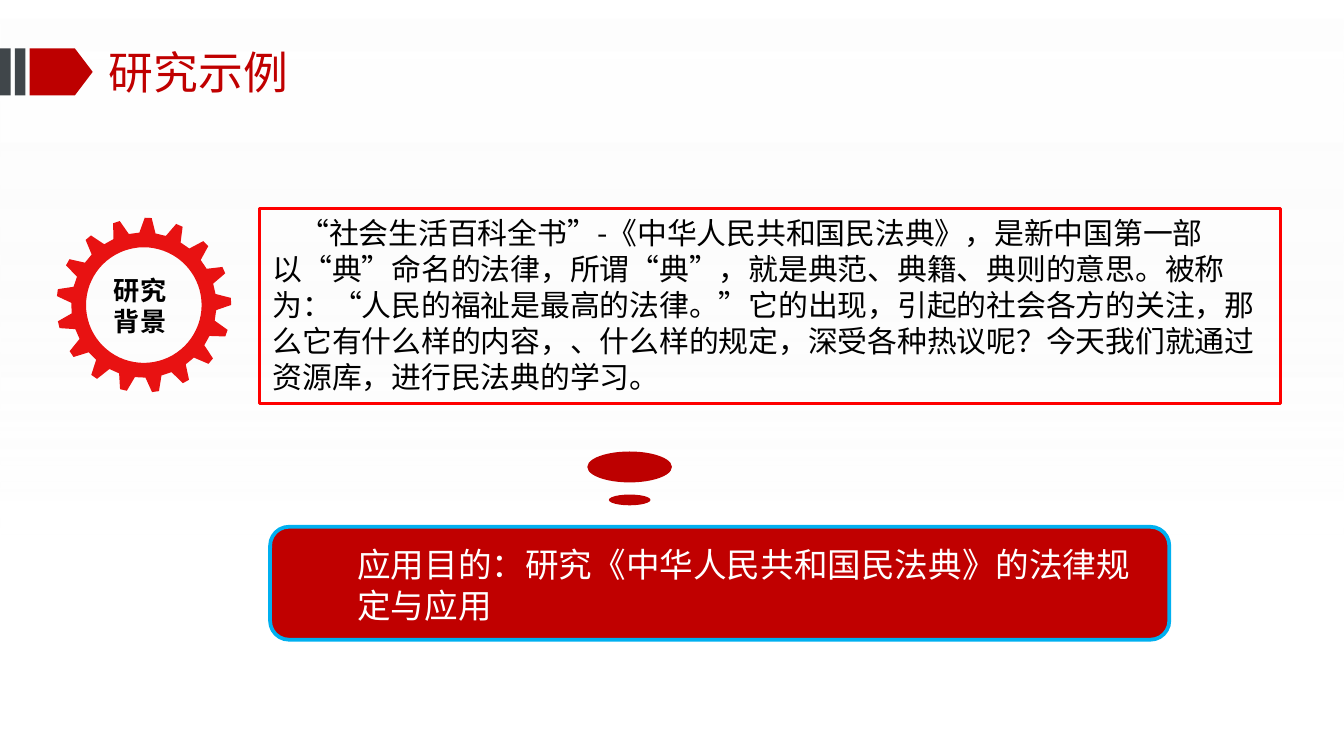
import math

import pptx
import pptx.dml.color
import pptx.enum.lang
import pptx.enum.shapes
import pptx.enum.text
import pptx.oxml.ns
import pptx.util
from lxml import etree

Inches = pptx.util.Inches
RGBColor = pptx.dml.color.RGBColor
MSO_SHAPE = pptx.enum.shapes.MSO_SHAPE
MSO_ANCHOR = pptx.enum.text.MSO_ANCHOR
qn = pptx.oxml.ns.qn

WHITE = RGBColor(0xFF, 0xFF, 0xFF)
BLACK = RGBColor(0, 0, 0)
PALE = RGBColor(0xF2, 0xF2, 0xF2)
DARK_RED = RGBColor(0xBD, 0, 0)
CRIMSON = RGBColor(0xC0, 0, 0)
GEAR_RED = RGBColor(0xE8, 0x12, 0x12)
BORDER_RED = RGBColor(0xFF, 0, 0)
SLATE = RGBColor(0x40, 0x46, 0x4A)
SKY = RGBColor(0, 0xB0, 0xF0)
CJK = "Noto Sans CJK SC"
LATIN = "Calibri"
WIDTH = 10
HEIGHT = WIDTH * 9 / 16

BACKGROUND_TEXT = (
    "“社会生活百科全书”-《中华人民共和国民法典》，是新中国第一部以“典”命名的法律，"
    "所谓“典”，就是典范、典籍、典则的意思。被称为：“人民的福祉是最高的法律。”"
    "它的出现，引起的社会各方的关注，那么它有什么样的内容，、什么样的规定，"
    "深受各种热议呢？今天我们就通过资源库，进行民法典的学习。"
)


def write(tf, text, size, color, font=LATIN, bold=False, indent=0):
    tf.word_wrap = True
    p = tf.paragraphs[0]
    p.text = text
    p.alignment = pptx.enum.text.PP_ALIGN.LEFT
    p.font.name = font
    p.font.size = pptx.util.Pt(size)
    p.font.bold = bold
    p.font.color.rgb = color
    p.font.language_id = pptx.enum.lang.MSO_LANGUAGE_ID.SIMPLIFIED_CHINESE
    pPr = p._p.get_or_add_pPr()
    pPr.set("hangingPunct", "0")
    if indent:
        pPr.set("indent", str(Inches(indent)))
    latin = pPr.find(qn("a:defRPr")).find(qn("a:latin"))
    latin.addnext(etree.Element(qn("a:ea"), typeface=CJK))


def style(shape, fill=None, line=None, width=1):
    shape.shadow.inherit = False
    if fill is None:
        shape.fill.background()
    else:
        shape.fill.solid()
        shape.fill.fore_color.rgb = fill
    if line is None:
        shape.line.fill.background()
    else:
        shape.line.color.rgb = line
        shape.line.width = pptx.util.Pt(width)


def add_box(s, kind, box, fill=None, line=None, width=1):
    shape = s.shapes.add_shape(kind, *map(Inches, box))
    style(shape, fill, line, width)
    return shape


def add_label(s, box, text, size, color, bold=False):
    tf = s.shapes.add_textbox(*map(Inches, box)).text_frame
    write(tf, text, size, color, bold=bold)


def add_backdrop(s):
    shape = add_box(s, MSO_SHAPE.RECTANGLE, (0, 0, WIDTH, HEIGHT))
    shape.fill.gradient()
    shape.fill.gradient_angle = 270
    for stop, position, color in zip(shape.fill.gradient_stops, (0, 0.71), (WHITE, PALE)):
        stop.position = position
        stop.color.rgb = color
    for clr, alpha in zip(shape._element.spPr.iter(qn("a:srgbClr")), (55, 0)):
        etree.SubElement(clr, qn("a:alpha"), val=str(alpha * 1000))
    s.shapes._spTree.insert(2, shape._element)


def add_gear(s, cx, cy, outer, root, hole, teeth, start):
    def point(radius, degrees):
        a = math.radians(degrees)
        return Inches(cx + radius * math.cos(a)), Inches(cy + radius * math.sin(a))

    profile = ((root, -6.4), (outer, -2.3), (outer, 2.3), (root, 6.4))
    rim = [point(radius, start + i * 360 / teeth + offset)
           for i in range(teeth) for radius, offset in profile]
    inner = [point(hole, -i * 5) for i in range(72)]
    builder = s.shapes.build_freeform(*rim[0], scale=1.0)
    builder.add_line_segments(rim[1:], close=True)
    builder.move_to(*inner[0])
    builder.add_line_segments(inner[1:], close=True)
    style(builder.convert_to_shape(), GEAR_RED)


def set_title(s, text):
    title = s.shapes.title
    title.left, title.top, title.width, title.height = map(
        Inches, (0.81, 0.3, 4.9, 0.47))
    tf = title.text_frame
    tf.margin_left = tf.margin_right = tf.margin_top = tf.margin_bottom = 0
    tf.vertical_anchor = MSO_ANCHOR.MIDDLE
    write(tf, text, 24, CRIMSON, CJK)


def main():
    prs = pptx.Presentation()
    prs.slide_width, prs.slide_height = Inches(WIDTH), Inches(HEIGHT)
    s = prs.slides.add_slide(prs.slide_layouts[5])

    add_backdrop(s)
    set_title(s, "研究示例")
    pentagon = add_box(s, MSO_SHAPE.PENTAGON, (0.22, 0.36, 0.47, 0.35), DARK_RED)
    pentagon.adjustments[0] = 0.38
    for left in (0.11, 0):
        add_box(s, MSO_SHAPE.RECTANGLE, (left, 0.36, 0.08, 0.35), SLATE)

    add_box(s, MSO_SHAPE.ROUNDED_RECTANGLE, (2.01, 3.92, 6.69, 0.84), CRIMSON, SKY, 2)
    add_label(s, (2.56, 4, 5.97, 0.71),
              "应用目的：研究《中华人民共和国民法典》的法律规定与应用", 18, WHITE)

    add_gear(s, 1.07, 2.27, outer=0.65, root=0.54, hole=0.43, teeth=17, start=-2.4)
    add_label(s, (0.75, 1.99, 0.7, 0.57), "研究背景", 14, BLACK, bold=True)

    frame = add_box(s, MSO_SHAPE.RECTANGLE, (1.93, 1.55, 7.6, 1.45),
                    line=BORDER_RED, width=1.5)
    frame.text_frame.vertical_anchor = MSO_ANCHOR.TOP
    write(frame.text_frame, BACKGROUND_TEXT, 16, BLACK, CJK, indent=0.2)

    for box in ((4.37, 3.36, 0.63, 0.23), (4.53, 3.68, 0.31, 0.08)):
        add_box(s, MSO_SHAPE.OVAL, box, DARK_RED)

    prs.save("out.pptx")


if __name__ == "__main__":
    main()
